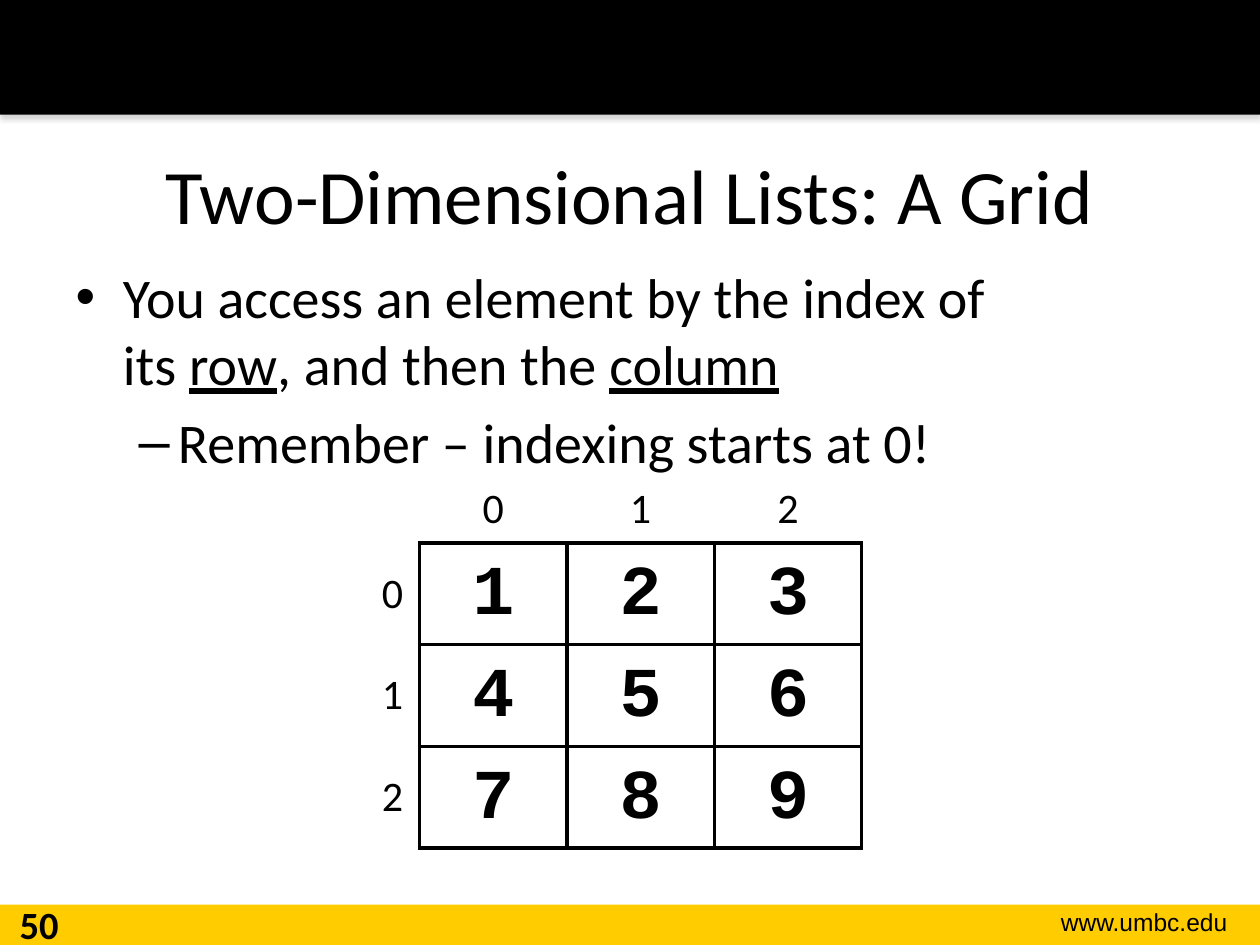
from dataclasses import dataclass

from lxml import etree
from pptx import Presentation
from pptx.dml.color import RGBColor
from pptx.enum.shapes import MSO_SHAPE
from pptx.enum.text import MSO_ANCHOR, PP_ALIGN
from pptx.oxml import parse_xml
from pptx.oxml.ns import nsdecls, qn
from pptx.util import Inches, Pt

RECT = MSO_SHAPE.RECTANGLE
LEFT, CENTER, RIGHT = PP_ALIGN.LEFT, PP_ALIGN.CENTER, PP_ALIGN.RIGHT
MIDDLE, BOTTOM = MSO_ANCHOR.MIDDLE, MSO_ANCHOR.BOTTOM
COLS, ROWS = 100, 75  # layout grid of the whole slide


@dataclass(frozen=True)
class Theme:
    ink: str = "000000"
    paper: str = "FFFFFF"
    accent: str = "FFCC00"
    shadow: str = "808080"
    sans: str = "Calibri"
    footer: str = "Arial"
    mono: str = "Courier New"
    title_size: int = 44
    body_size: int = 32
    value_size: int = 40
    label_size: int = 24
    number_size: int = 22
    footer_size: int = 14
    border: float = 2.25


class Deck:
    """Holds the theme and the current slide; lengths are grid columns and rows."""

    def __init__(self, theme):
        self.theme = theme
        self.prs = Presentation()
        self.prs.slide_width, self.prs.slide_height = Inches(10), Inches(7.5)
        self.s = self.prs.slides.add_slide(self.prs.slide_layouts[1])

    def x(self, cols):
        return round(self.prs.slide_width * cols / COLS)

    def y(self, rows):
        return round(self.prs.slide_height * rows / ROWS)

    def box(self, left, top, width, height):
        return self.x(left), self.y(top), self.x(width), self.y(height)

    def style(self, p, size, font, align=LEFT, bold=False):
        p.alignment = align
        for r in p.runs:
            r.font.size, r.font.name, r.font.bold = Pt(size), font, bold
            r.font.color.rgb = RGBColor.from_string(self.theme.ink)

    def band(self, top, height, color, shadow=False):
        sp = self.s.shapes.add_shape(RECT, *self.box(0, top, COLS, height))
        sp.shadow.inherit = False
        sp.fill.solid()
        sp.fill.fore_color.rgb = RGBColor.from_string(color)
        sp.line.fill.background()
        if shadow:
            effects = sp.element.spPr.find(qn("a:effectLst"))
            effects.append(parse_xml(
                f'<a:outerShdw {nsdecls("a")} blurRad="{Pt(3.1)}" dist="{Pt(1.8)}" '
                f'dir="5400000" rotWithShape="0"><a:srgbClr val="{self.theme.shadow}">'
                '<a:alpha val="35000"/></a:srgbClr></a:outerShdw>'))

    def text(self, text, at, size, font, align, bold=False):
        tf = self.s.shapes.add_textbox(*self.box(*at)).text_frame
        tf.word_wrap = True
        tf.text = text
        self.style(tf.paragraphs[0], size, font, align, bold)

    def place(self, sp, at):
        sp.left, sp.top, sp.width, sp.height = self.box(*at)
        return sp.text_frame

    def title(self, text, at):
        tf = self.place(self.s.shapes.title, at)
        tf.vertical_anchor = MIDDLE
        tf.text = text
        self.style(tf.paragraphs[0], self.theme.title_size, self.theme.sans, CENTER)

    def bullets(self, items, at):
        """Each item is a level and its lines; a line lists (text, underlined)."""
        tf = self.place(self.s.placeholders[1], at)
        for i, (level, lines) in enumerate(items):
            p = tf.add_paragraph() if i else tf.paragraphs[0]
            p.level = level
            if i == 0:
                p.space_before = Pt(0)
            for n, line in enumerate(lines):
                if n:
                    p.add_line_break()
                for text, underlined in line:
                    r = p.add_run()
                    r.text, r.font.underline = text, underlined
            self.style(p, self.theme.body_size, self.theme.sans)

    def borders(self, cell, edges):
        tcPr = cell._tc.get_or_add_tcPr()
        for side, drawn in edges.items():
            ln = etree.SubElement(tcPr, qn(f"a:ln{side}"))
            if drawn:
                ln.set("w", str(Pt(self.theme.border)))
                fill = etree.SubElement(ln, qn("a:solidFill"))
                etree.SubElement(fill, qn("a:srgbClr"), val=self.theme.ink)
            else:
                etree.SubElement(ln, qn("a:noFill"))

    def indexed_grid(self, values, left, top, col_width, head_height, row_height):
        """Table of values with its row and column indexes along the outside."""
        t = self.theme
        n_rows, n_cols = len(values) + 1, len(values[0]) + 1
        at = (left, top, col_width * n_cols, head_height + row_height * (n_rows - 1))
        table = self.s.shapes.add_table(n_rows, n_cols, *self.box(*at)).table
        table.first_row = table.horz_banding = False
        rows = [["", *range(n_cols - 1)]]
        rows += [[i, *row] for i, row in enumerate(values)]
        for i, row in enumerate(rows):
            table.rows[i].height = self.y(row_height if i else head_height)
            for j, value in enumerate(row):
                cell = table.cell(i, j)
                inside = i > 0 and j > 0
                self.borders(cell, {"L": inside, "R": i > 0, "T": inside, "B": j > 0})
                cell.fill.solid()
                cell.fill.fore_color.rgb = RGBColor.from_string(t.paper)
                cell.margin_left = cell.margin_right = Inches(0.13)
                cell.margin_top = cell.margin_bottom = Inches(0.07)
                cell.vertical_anchor = BOTTOM if j else MIDDLE
                cell.text = str(value)
                size, font = (t.value_size, t.mono) if inside else (t.label_size, t.sans)
                self.style(cell.text_frame.paragraphs[0], size, font,
                           CENTER if j else RIGHT, inside)


def main():
    theme = Theme()
    deck = Deck(theme)

    # Header and footer bands
    deck.band(71.8, 3.2, theme.accent)
    deck.band(0, 9.1, theme.ink, shadow=True)
    deck.text("www.umbc.edu", (78.5, 71.5, 19.9, 3.4),
              theme.footer_size, theme.footer, RIGHT)

    # Title and list
    deck.title("Two-Dimensional Lists: A Grid", (5, 9.1, 90, 12.5))
    deck.bullets([
        (0, [[("You access an element by the index of ", False)],
             [("its ", False), ("row", True),
              (", and then the ", False), ("column", True)]]),
        (1, [[("Remember – indexing starts at 0!", False)]]),
    ], (5, 20.3, 90, 45.5))

    # Slide number
    deck.text("50", (0, 71, 6.2, 4), theme.number_size, theme.sans, CENTER, bold=True)

    # Three by three grid
    deck.indexed_grid([[1, 2, 3], [4, 5, 6], [7, 8, 9]], left=21.6, top=37.7,
                      col_width=11.7, head_height=5.3, row_height=7.6)

    deck.prs.save("out.pptx")


if __name__ == "__main__":
    main()
